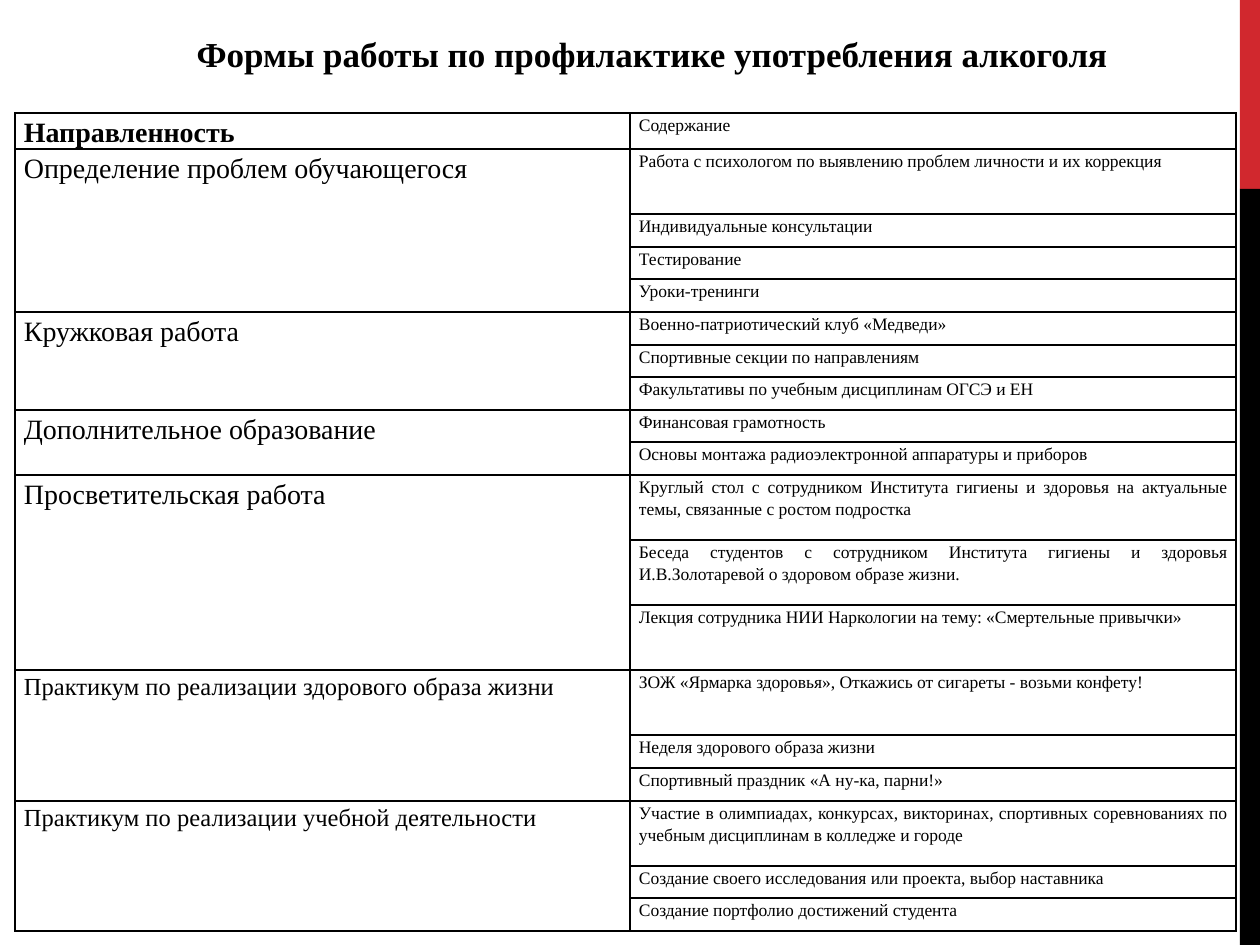
from lxml.etree import SubElement
from pptx import Presentation
from pptx.dml.color import RGBColor
from pptx.enum.shapes import MSO_SHAPE
from pptx.enum.text import MSO_ANCHOR, MSO_AUTO_SIZE, PP_ALIGN
from pptx.oxml.ns import qn
from pptx.util import Emu, Pt

PX = 914400 // 126  # 126 px to the inch

THEME = {
    "font": "Times New Roman",
    "ink": RGBColor(0x00, 0x00, 0x00),
    "accent": RGBColor(0xD1, 0x28, 0x2E),
    "title": 20,
    "large": 16,
    "medium": 14,
    "small": 10,
}

HEADER = ("Направленность", "Содержание")

# Direction, its text size, and its activities with height in row units
SECTIONS = [
    ("Определение проблем обучающегося", "large", [
        ("Работа с психологом по выявлению проблем личности и их коррекция", 2),
        ("Индивидуальные консультации", 1),
        ("Тестирование", 1),
        ("Уроки-тренинги", 1),
    ]),
    ("Кружковая работа", "large", [
        ("Военно-патриотический клуб «Медведи»", 1),
        ("Спортивные секции по направлениям", 1),
        ("Факультативы по учебным дисциплинам ОГСЭ и ЕН", 1),
    ]),
    ("Дополнительное образование", "large", [
        ("Финансовая грамотность", 1),
        ("Основы монтажа радиоэлектронной аппаратуры и приборов", 1),
    ]),
    ("Просветительская работа", "large", [
        ("Круглый стол с сотрудником Института гигиены и здоровья на актуальные "
         "темы, связанные с ростом подростка", 2),
        ("Беседа студентов с сотрудником Института гигиены и здоровья "
         "И.В.Золотаревой о здоровом образе жизни.", 2),
        ("Лекция сотрудника НИИ Наркологии на тему: «Смертельные привычки»", 2),
    ]),
    ("Практикум по реализации здорового образа жизни", "medium", [
        ("ЗОЖ «Ярмарка здоровья», Откажись от сигареты - возьми конфету!", 2),
        ("Неделя здорового образа жизни", 1),
        ("Спортивный праздник «А ну-ка, парни!»", 1),
    ]),
    ("Практикум по реализации учебной деятельности", "medium", [
        ("Участие в олимпиадах, конкурсах, викторинах, спортивных соревнованиях по "
         "учебным дисциплинам в колледже и городе", 2),
        ("Создание своего исследования или проекта, выбор наставника", 1),
        ("Создание портфолио достижений студента", 1),
    ]),
]


def set_text(tf, text, size, bold=False, align=PP_ALIGN.LEFT, spacing=1.0):
    tf.text = text
    p = tf.paragraphs[0]
    p.alignment = align
    p.line_spacing = spacing
    p.font.name = THEME["font"]
    p.font.size = Pt(THEME[size])
    p.font.bold = bold
    p.font.color.rgb = THEME["ink"]


def fill_cell(cell, text, size, bold=False):
    cell.margin_left = cell.margin_right = 9 * PX
    cell.margin_top = cell.margin_bottom = 0
    set_text(cell.text_frame, text, size, bold, PP_ALIGN.JUSTIFY, 1.15)


prs = Presentation()
prs.slide_width, prs.slide_height = Emu(1260 * PX), Emu(945 * PX)
slide = prs.slides.add_slide(prs.slide_layouts[5])

# Side bars
for top, height, color in ((0, 189, "accent"), (189, 756, "ink")):
    sp = slide.shapes.add_shape(
        MSO_SHAPE.RECTANGLE, 1240 * PX, top * PX, 20 * PX, height * PX)
    sp.shadow.inherit = False
    sp.fill.solid()
    sp.fill.fore_color.rgb = THEME[color]
    sp.line.fill.background()

# Title
title = slide.shapes.title
title.left, title.top, title.width, title.height = (
    184 * PX, 26 * PX, 953 * PX, 56 * PX)
tf = title.text_frame
tf.word_wrap = True
tf.auto_size = MSO_AUTO_SIZE.NONE
tf.vertical_anchor = MSO_ANCHOR.TOP
set_text(tf, "Формы работы по профилактике употребления алкоголя", "title", True)

# Table grid: the body height is shared out by row units
HEAD_H, BODY_H = 36, 782
units = [unit for section in SECTIONS for text, unit in section[2]]
table = slide.shapes.add_table(
    len(units) + 1, 2, 15 * PX, 113 * PX, 1221 * PX, (HEAD_H + BODY_H) * PX).table
table.first_row = table.horz_banding = False
table.columns[0].width, table.columns[1].width = 615 * PX, 606 * PX
table.rows[0].height = HEAD_H * PX
edges = [round(BODY_H * sum(units[:i]) / sum(units)) for i in range(len(units) + 1)]
for i in range(len(units)):
    table.rows[i + 1].height = (edges[i + 1] - edges[i]) * PX

# Table text
fill_cell(table.cell(0, 0), HEADER[0], "large", True)
fill_cell(table.cell(0, 1), HEADER[1], "small")
row = 1
for direction, size, activities in SECTIONS:
    last = row + len(activities) - 1
    table.cell(row, 0).merge(table.cell(last, 0))
    fill_cell(table.cell(row, 0), direction, size)
    for i, (activity, unit) in enumerate(activities):
        fill_cell(table.cell(row + i, 1), activity, "small")
    row = last + 1

# Cell borders, no fill
for cell in table.iter_tcs() if hasattr(table, "iter_tcs") else table.iter_cells():
    tcPr = cell._tc.get_or_add_tcPr()
    for side in ("a:lnL", "a:lnR", "a:lnT", "a:lnB"):
        ln = SubElement(tcPr, qn(side), w=str(Pt(1)))
        solid = SubElement(ln, qn("a:solidFill"))
        SubElement(solid, qn("a:srgbClr"), val=str(THEME["ink"]))
    cell.fill.background()

prs.save("out.pptx")
